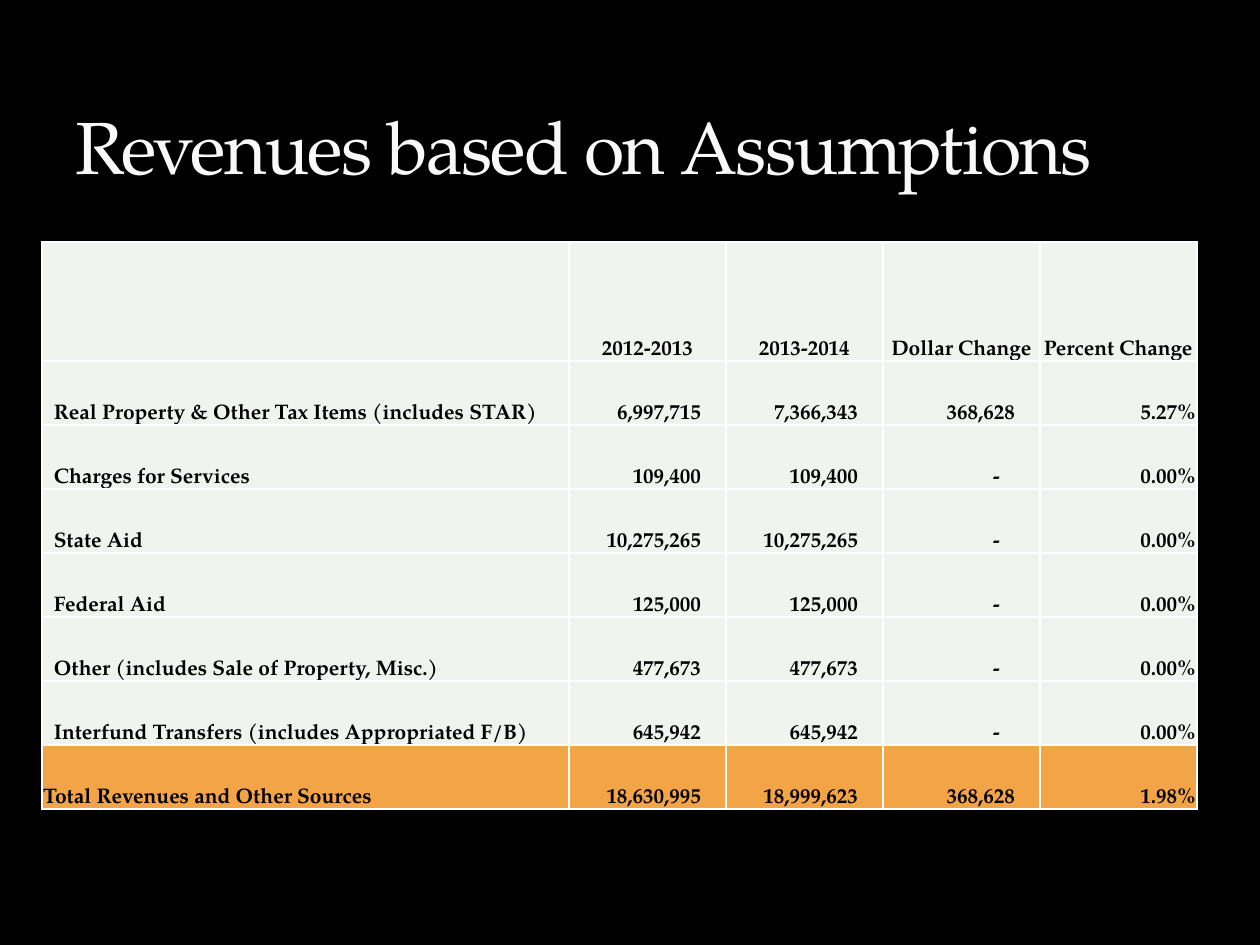
from pptx import Presentation, util as u
from pptx.dml.color import RGBColor
from pptx.enum import text
from pptx.oxml import parse_xml
from pptx.oxml.ns import nsdecls

PX = 914400 // 126
FACE = "TeX Gyre Pagella"
PALE, GOLD = "F0F3EE", "F3A447"
LEFT, MID, RIGHT = text.PP_ALIGN.LEFT, text.PP_ALIGN.CENTER, text.PP_ALIGN.RIGHT

HEADS = ["", "2012-2013", "2013-2014", "Dollar Change", "Percent Change"]
ROWS = [
    ["Real Property & Other Tax Items (includes STAR)", "6,997,715", "7,366,343", "368,628", "5.27%"],
    ["Charges for Services", "109,400", "109,400", "-", "0.00%"],
    ["State Aid", "10,275,265", "10,275,265", "-", "0.00%"],
    ["Federal Aid", "125,000", "125,000", "-", "0.00%"],
    ["Other (includes Sale of Property, Misc.)", "477,673", "477,673", "-", "0.00%"],
    ["Interfund Transfers (includes Appropriated F/B)", "645,942", "645,942", "-", "0.00%"],
    ["Total Revenues and Other Sources", "18,630,995", "18,999,623", "368,628", "1.98%"],
]


def px(*vals):
    return [u.Emu(v * PX) for v in vals]


def tint(hue):
    return RGBColor.from_string(hue)


def style(font, size, hue, bold=False):
    font.name, font.size, font.bold = FACE, u.Pt(size), bold
    font.color.rgb = tint(hue)


def title(slide, box, words):
    frame = slide.shapes.add_textbox(*px(*box)).text_frame
    frame.word_wrap = True
    frame.vertical_anchor = text.MSO_ANCHOR.BOTTOM
    frame.margin_bottom = 0
    run = frame.paragraphs[0].add_run()
    run.text = words
    style(run.font, 42, "F9F9F9")
    run._r.get_or_add_rPr().set("spc", "-100")


def border(cell):
    props = cell._tc.get_or_add_tcPr()
    for n, side in enumerate(("lnL", "lnR", "lnT", "lnB")):
        props.insert(n, parse_xml(
            f'<a:{side} {nsdecls("a")} w="12700"><a:solidFill>'
            f'<a:srgbClr val="FFFFFF"/></a:solidFill></a:{side}>'))


def layout(row, col, words, last):
    """Alignment, left inset and right inset of a cell."""
    if row == 0:
        return MID, 1, 1
    if col == 0:
        return LEFT, 1 if row == last else 12, 1
    if col == 4:
        return RIGHT, 1, 1
    return RIGHT, 1, 40 if words == "-" else 25


def grid(slide, box, wide, tall):
    data = [HEADS] + ROWS
    last, cols = len(ROWS), len(HEADS)
    table = slide.shapes.add_table(last + 1, cols, *px(*box)).table
    table.first_row = table.horz_banding = False
    # The first column and row are larger; the rest share what is left
    for n, col in enumerate(table.columns):
        col.width = px(wide if n == 0 else (box[2] - wide) // (cols - 1))[0]
    for n, row in enumerate(table.rows):
        row.height = px(tall if n == 0 else (box[3] - tall) // last)[0]
    for r, line in enumerate(data):
        for c, words in enumerate(line):
            cell = table.cell(r, c)
            side, near, far = layout(r, c, words, last)
            cell.margin_left, cell.margin_right, cell.margin_top, cell.margin_bottom = px(near, far, 1, 0)
            cell.vertical_anchor = text.MSO_ANCHOR.BOTTOM
            cell.fill.solid()
            cell.fill.fore_color.rgb = tint(GOLD if r == last else PALE)
            border(cell)
            cell.text = words
            para = cell.text_frame.paragraphs[0]
            para.alignment = side
            style(para.font, 12, "000000", True)


def main():
    deck = Presentation()
    deck.slide_width, deck.slide_height = px(1260, 945)
    slide = deck.slides.add_slide(deck.slide_layouts[6])
    slide.background.fill.solid()
    slide.background.fill.fore_color.rgb = tint("000000")
    # Heading
    title(slide, (63, 21, 1134, 168), "Revenues based on Assumptions")
    # Revenue table
    grid(slide, (42, 242, 1155, 567), 527, 119)
    deck.save("out.pptx")


if __name__ == "__main__":
    main()
